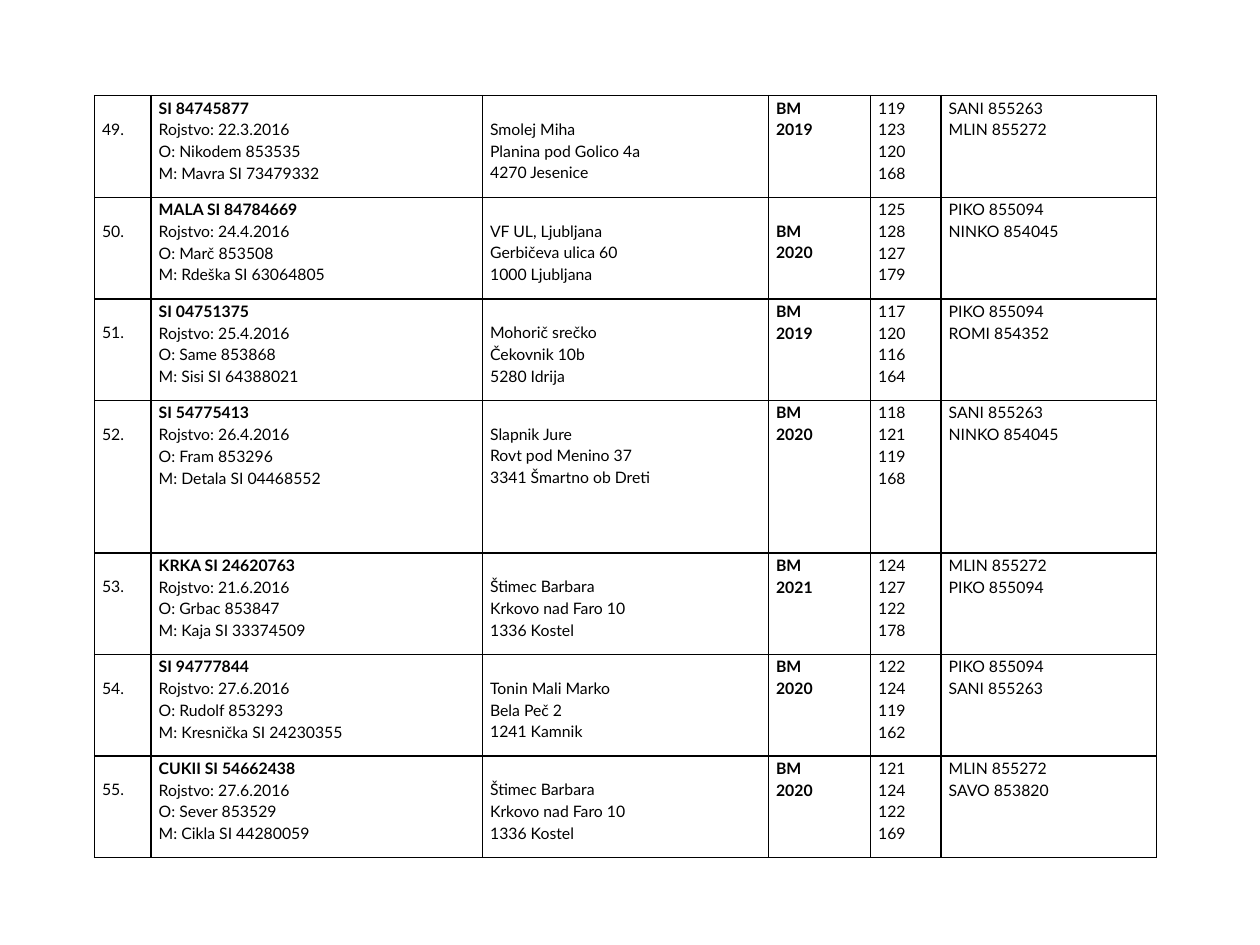
"""Build a one-slide register of rams with breeder, year, measures and sires."""
from lxml import etree
from pptx import Presentation
from pptx import util as u
from pptx.dml.color import RGBColor
from pptx.enum import text
from pptx.oxml import ns


def color(value):
    return RGBColor.from_string(value)


def add_border(cell, side, value, points):
    line = etree.Element(ns.qn(f"a:ln{side}"), w=str(u.Pt(points)))
    fill = etree.SubElement(line, ns.qn("a:solidFill"))
    etree.SubElement(fill, ns.qn("a:srgbClr"), val=value)
    cell._tc.get_or_add_tcPr().insert("LRTB".index(side), line)


INK = "000000"
LINE_HEIGHT = 0.17
COLUMNS = [0.45, 2.63, 2.27, 0.81, 0.56, 1.71]
ROW_UNITS = [2, 2, 2, 3, 2, 2, 2]
TABLE_HEIGHT = 6.05
NUMBER, ANIMAL, BREEDER, YEAR = range(4)
FIRST_NUMBER = 49
LOWERED_YEAR = 50

records = [
    ("SI 84745877|Rojstvo: 22.3.2016|O: Nikodem 853535|M: Mavra SI 73479332",
     "Smolej Miha|Planina pod Golico 4a|4270 Jesenice",
     "BM|2019", "119|123|120|168", "SANI 855263|MLIN 855272"),
    ("MALA SI 84784669|Rojstvo: 24.4.2016|O: Marč 853508|M: Rdeška SI 63064805",
     "VF UL, Ljubljana|Gerbičeva ulica 60|1000 Ljubljana",
     "BM|2020", "125|128|127|179", "PIKO 855094|NINKO 854045"),
    ("SI 04751375|Rojstvo: 25.4.2016|O: Same 853868|M: Sisi SI 64388021",
     "Mohorič srečko|Čekovnik 10b|5280 Idrija",
     "BM|2019", "117|120|116|164", "PIKO 855094|ROMI 854352"),
    ("SI 54775413|Rojstvo: 26.4.2016|O: Fram 853296|M: Detala SI 04468552",
     "Slapnik Jure|Rovt pod Menino 37|3341 Šmartno ob Dreti",
     "BM|2020", "118|121|119|168", "SANI 855263|NINKO 854045"),
    ("KRKA SI 24620763|Rojstvo: 21.6.2016|O: Grbac 853847|M: Kaja SI 33374509",
     "Štimec Barbara|Krkovo nad Faro 10|1336 Kostel",
     "BM|2021", "124|127|122|178", "MLIN 855272|PIKO 855094"),
    ("SI 94777844|Rojstvo: 27.6.2016|O: Rudolf 853293|M: Kresnička SI 24230355",
     "Tonin Mali Marko|Bela Peč 2|1241 Kamnik",
     "BM|2020", "122|124|119|162", "PIKO 855094|SANI 855263"),
    ("CUKII SI 54662438|Rojstvo: 27.6.2016|O: Sever 853529|M: Cikla SI 44280059",
     "Štimec Barbara|Krkovo nad Faro 10|1336 Kostel",
     "BM|2020", "121|124|122|169", "MLIN 855272|SAVO 853820"),
]

deck = Presentation()
deck.slide_width, deck.slide_height = u.Inches(10), u.Inches(7.5)
page = deck.slides.add_slide(deck.slide_layouts[6])

table = page.shapes.add_table(
    len(records), len(COLUMNS), u.Inches(0.75), u.Inches(0.76),
    u.Inches(sum(COLUMNS)), u.Inches(TABLE_HEIGHT)).table
table.first_row = table.horz_banding = False
for column, width in zip(table.columns, COLUMNS):
    column.width = u.Inches(width)
for row, units in zip(table.rows, ROW_UNITS):
    row.height = u.Inches(TABLE_HEIGHT * units / sum(ROW_UNITS))

for row_index, record in enumerate(records):
    number = FIRST_NUMBER + row_index
    for column_index, content in enumerate((f"{number}.", *record)):
        cell = table.cell(row_index, column_index)
        lowered = column_index in (NUMBER, BREEDER) or (
            column_index == YEAR and number == LOWERED_YEAR)
        cell.margin_left = cell.margin_right = u.Inches(0.06)
        cell.margin_top = u.Inches(LINE_HEIGHT if lowered else 0)
        cell.margin_bottom = 0
        cell.fill.background()
        for side in "LRTB":
            add_border(cell, side, INK, 1)
        cell.text_frame.text = content.replace("|", "\n")
        for line_index, para in enumerate(cell.text_frame.paragraphs):
            para.alignment = text.PP_ALIGN.JUSTIFY
            para.line_spacing = 1.15
            for span in para.runs:
                span.font.name = "Lato"
                span.font.size = u.Pt(9)
                span.font.color.rgb = color(INK)
                span.font.bold = column_index == YEAR or (
                    column_index == ANIMAL and line_index == 0)

deck.save("out.pptx")
